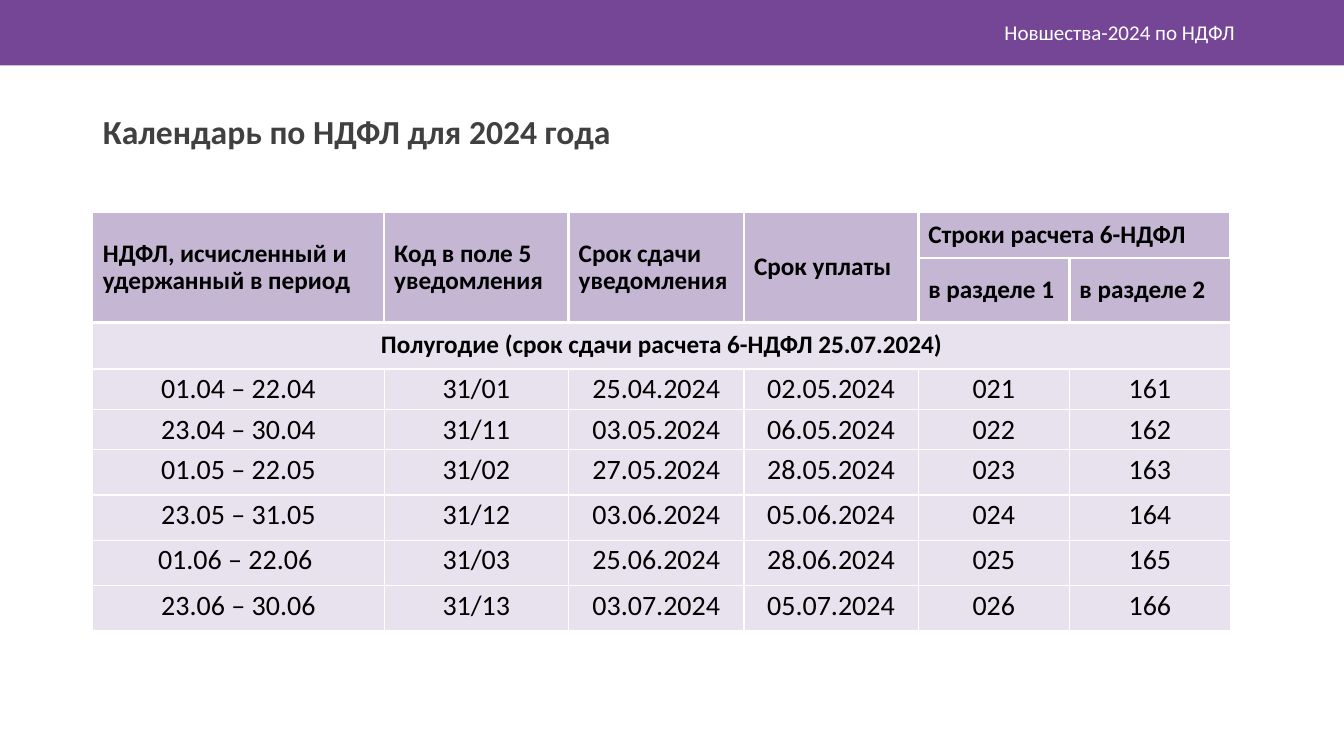
from lxml.etree import SubElement
from pptx import Presentation
from pptx.dml.color import RGBColor
from pptx.enum.shapes import MSO_SHAPE
from pptx.enum.text import MSO_ANCHOR, MSO_AUTO_SIZE, PP_ALIGN
from pptx.oxml.ns import qn
from pptx.util import Cm, Pt

COLORS = {
    "bar": "764696",
    "cell": "8D6FAB",
    "white": "FFFFFF",
    "heading": "404040",
    "text": "000000",
}
COLUMN_WIDTHS = [7.34, 4.65, 4.42, 4.39, 3.81, 4.06]
ROW_HEIGHTS = [1.14, 1.14, 1.17, 1.02, 1.02] + [1.14] * 4
HEADER_ROWS = 2
CALENDAR = [
    ["НДФЛ, исчисленный и удержанный в период", "Код в поле 5 уведомления",
     "Срок сдачи уведомления", "Срок уплаты", "Строки расчета 6-НДФЛ", ""],
    ["", "", "", "", "в разделе 1", "в разделе 2"],
    ["Полугодие (срок сдачи расчета 6-НДФЛ 25.07.2024)", "", "", "", "", ""],
    ["01.04 – 22.04", "31/01", "25.04.2024", "02.05.2024", "021", "161"],
    ["23.04 – 30.04", "31/11", "03.05.2024", "06.05.2024", "022", "162"],
    ["01.05 – 22.05", "31/02", "27.05.2024", "28.05.2024", "023", "163"],
    ["23.05 – 31.05", "31/12", "03.06.2024", "05.06.2024", "024", "164"],
    ["01.06 – 22.06 ", "31/03", "25.06.2024", "28.06.2024", "025", "165"],
    ["23.06 – 30.06", "31/13", "03.07.2024", "05.07.2024", "026", "166"],
]
MERGES = [((0, column), (1, column)) for column in range(4)]
MERGES += [((0, 4), (0, 5)), ((2, 0), (2, 5))]


def write(frame, text, size=18, color="text", bold=False,
          align=PP_ALIGN.LEFT, spacing=1.0, after=0):
    """Put one formatted paragraph into a text frame."""
    para = frame.paragraphs[0]
    para.alignment = align
    para.line_spacing = spacing
    para.space_before = Pt(0)
    para.space_after = Pt(after)
    span = para.add_run()
    span.text = text
    span.font.name = "Calibri"
    span.font.size = Pt(size)
    span.font.bold = bold
    span.font.color.rgb = RGBColor.from_string(COLORS[color])


class SlideBuilder:
    """Hold the style and the current slide."""

    def __init__(self, deck):
        self.page = deck.slides.add_slide(deck.slide_layouts[5])

    def bar(self, left, top, width, height):
        """Draw the coloured band."""
        shape = self.page.shapes.add_shape(
            MSO_SHAPE.RECTANGLE, Cm(left), Cm(top), Cm(width), Cm(height))
        shape.shadow.inherit = False
        shape.fill.solid()
        shape.fill.fore_color.rgb = RGBColor.from_string(COLORS["bar"])
        shape.line.fill.background()

    def label(self, text, left, top, width, height, **style):
        """Add a wrapped text box centred vertically."""
        box = self.page.shapes.add_textbox(
            Cm(left), Cm(top), Cm(width), Cm(height))
        box.text_frame.word_wrap = True
        box.text_frame.vertical_anchor = MSO_ANCHOR.MIDDLE
        write(box.text_frame, text, **style)

    def title(self, text, left, top, width, height, **style):
        """Place and fill the title placeholder."""
        box = self.page.shapes.title
        box.left, box.top = Cm(left), Cm(top)
        box.width, box.height = Cm(width), Cm(height)
        box.text_frame.auto_size = MSO_AUTO_SIZE.NONE
        box.text_frame.vertical_anchor = MSO_ANCHOR.TOP
        write(box.text_frame, text, **style)

    def cell_style(self, cell, borders, opacity):
        """Give a cell its borders and translucent fill."""
        properties = cell._tc.get_or_add_tcPr()
        for side, width in borders.items():
            line = SubElement(properties, qn(f"a:ln{side}"), w=str(Pt(width)))
            paint = SubElement(line, qn("a:solidFill"))
            SubElement(paint, qn("a:srgbClr"), val=COLORS["white"])
        cell.fill.solid()
        cell.fill.fore_color.rgb = RGBColor.from_string(COLORS["cell"])
        tint = properties.find(f"{qn('a:solidFill')}/{qn('a:srgbClr')}")
        SubElement(tint, qn("a:alpha"), val=str(opacity * 1000))

    def table(self, rows, left, top):
        """Build the calendar table."""
        frame = self.page.shapes.add_table(
            len(rows), len(COLUMN_WIDTHS), Cm(left), Cm(top),
            Cm(sum(COLUMN_WIDTHS)), Cm(sum(ROW_HEIGHTS)))
        grid = frame.table
        grid.first_row = grid.horz_banding = False
        for column, width in zip(grid.columns, COLUMN_WIDTHS):
            column.width = Cm(width)
        for row, height in zip(grid.rows, ROW_HEIGHTS):
            row.height = Cm(height)
        for first, last in MERGES:
            grid.cell(*first).merge(grid.cell(*last))
        last_column = len(COLUMN_WIDTHS) - 1
        for r, values in enumerate(rows):
            header, bold = r < HEADER_ROWS, r <= HEADER_ROWS
            for c, text in enumerate(values):
                cell = grid.cell(r, c)
                heavy = {"L": header and c > 0,
                         "R": header and c < last_column,
                         "T": 0 < r <= HEADER_ROWS + 1,
                         "B": bold}
                borders = {side: 2.25 if thick else 1
                           for side, thick in heavy.items()}
                self.cell_style(cell, borders, 50 if header else 20)
                cell.vertical_anchor = (
                    MSO_ANCHOR.MIDDLE if bold else MSO_ANCHOR.TOP)
                if text:
                    write(cell.text_frame, text, size=18 if bold else 20,
                          bold=bold, spacing=0.9, after=8,
                          align=PP_ALIGN.LEFT if header else PP_ALIGN.CENTER)


def main():
    """Build and save the slide."""
    deck = Presentation()
    deck.slide_width, deck.slide_height = Cm(33.87), Cm(19.05)
    slide = SlideBuilder(deck)
    slide.bar(0, 0, 33.87, 1.65)
    slide.label("Новшества-2024 по НДФЛ", 8.81, 0.3, 22.56, 1.02,
                size=15, color="white", align=PP_ALIGN.RIGHT)
    slide.title("Календарь по НДФЛ для 2024 года", 2.34, 2.79, 29.9, 15.06,
                size=24, color="heading", bold=True, spacing=0.9)
    slide.table(CALENDAR, 2.34, 5.36)
    deck.save("out.pptx")


if __name__ == "__main__":
    main()
